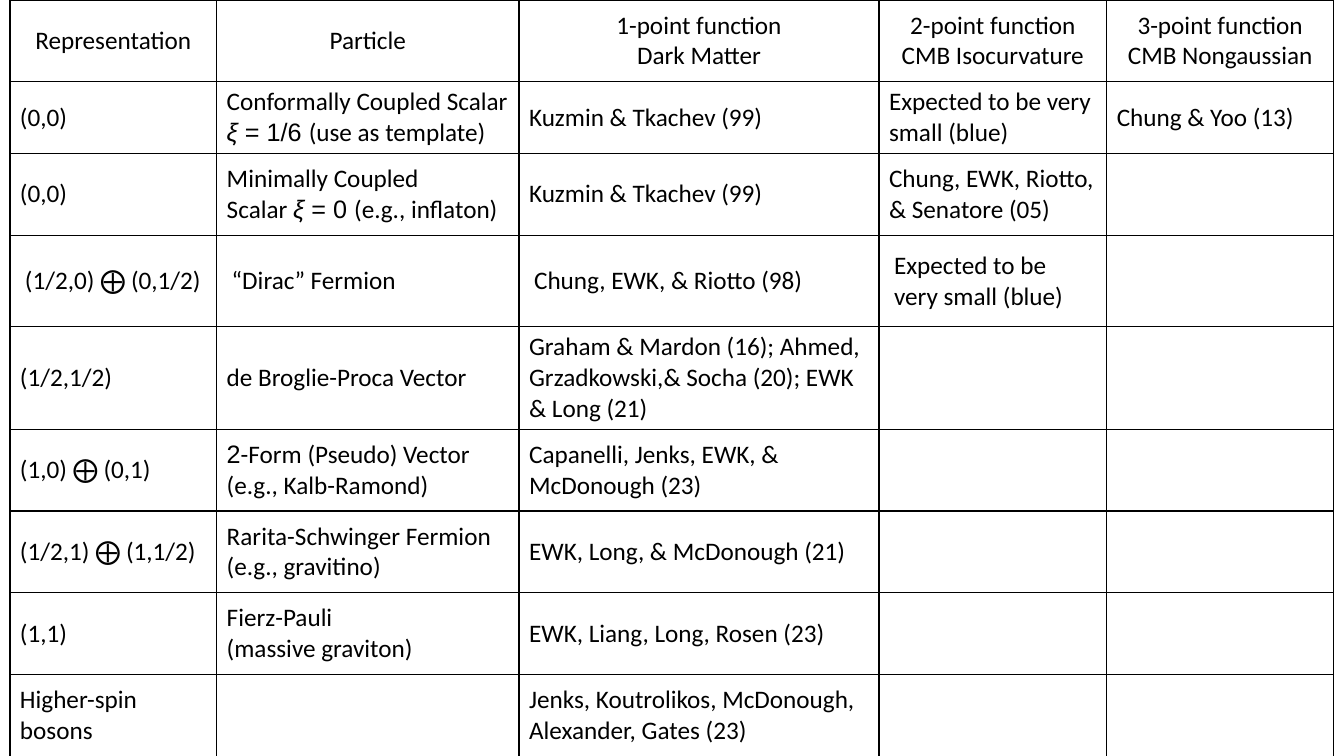
from dataclasses import dataclass

from lxml import etree
from pptx import Presentation
from pptx.dml.color import RGBColor
from pptx.enum.text import MSO_ANCHOR, PP_ALIGN
from pptx.oxml.ns import qn
from pptx.table import _Cell
from pptx.util import Cm, Pt

MIDDLE = MSO_ANCHOR.MIDDLE
CENTER = PP_ALIGN.CENTER
LEFT = PP_ALIGN.LEFT

COLORS = {"ink": "000000"}
TEXT_SIZE = Pt(18)
BORDER_WIDTH = Pt(1)
BORDER_SIDES = ("a:lnL", "a:lnR", "a:lnT", "a:lnB")
COLUMN_WIDTHS = (5.21, 7.62, 9.07, 5.74, 5.72)
WIDE_MARGIN = 0.38


@dataclass(frozen=True)
class Span:
    text: str
    font: str = "Calibri"
    italic: bool = False


Line = list[Span]


@dataclass(frozen=True)
class Row:
    cells: tuple[str | list[Line], ...]
    height: float = 2.06
    align: PP_ALIGN = LEFT
    margin: float | None = None


def scalar_coupling(value: str, note: str) -> Line:
    return [Span("ξ", "Arial", True), Span(f" = {value} ", "Arial"), Span(note)]


ROWS = (
    Row(
        (
            "Representation",
            "Particle",
            "1-point function\nDark Matter",
            "2-point function\nCMB Isocurvature",
            "3-point function CMB Nongaussian",
        ),
        align=CENTER,
    ),
    Row(
        (
            "(0,0)",
            [[Span("Conformally Coupled Scalar "), *scalar_coupling("1/6", "(use as template)")]],
            "Kuzmin & Tkachev (99)",
            "Expected to be very small (blue)",
            "Chung & Yoo (13)",
        ),
        height=1.78,
    ),
    Row(
        (
            "(0,0)",
            [
                [Span("Minimally Coupled")],
                [Span("Scalar "), *scalar_coupling("0", "(e.g., inflaton)")],
            ],
            "Kuzmin & Tkachev (99)",
            "Chung, EWK, Riotto, & Senatore (05)",
            "",
        ),
    ),
    Row(
        (
            "(1/2,0) ⨁ (0,1/2)",
            "“Dirac” Fermion",
            "Chung, EWK, & Riotto (98)",
            "Expected to be very small (blue)",
            "",
        ),
        height=2.31,
        margin=WIDE_MARGIN,
    ),
    Row(
        (
            "(1/2,1/2)",
            "de Broglie-Proca Vector",
            "Graham & Mardon (16); Ahmed, Grzadkowski,& Socha (20); EWK & Long (21)",
            "",
            "",
        ),
        height=2.57,
    ),
    Row(
        (
            "(1,0) ⨁ (0,1)",
            [
                [Span("2", "Arial"), Span("-Form (Pseudo) Vector")],
                [Span("(e.g., Kalb-Ramond)")],
            ],
            "Capanelli, Jenks, EWK, & McDonough (23)",
            "",
            "",
        ),
    ),
    Row(
        (
            "(1/2,1) ⨁ (1,1/2)",
            "Rarita-Schwinger Fermion\n(e.g., gravitino)",
            "EWK, Long, & McDonough (21)",
            "",
            "",
        ),
    ),
    Row(
        (
            "(1,1)",
            "Fierz-Pauli\n(massive graviton)",
            "EWK, Liang, Long, Rosen (23)",
            "",
            "",
        ),
    ),
    Row(
        (
            "Higher-spin bosons",
            "",
            "Jenks, Koutrolikos, McDonough, Alexander, Gates (23)",
            "",
            "",
        ),
    ),
)


def draw_borders(cell: _Cell) -> None:
    properties = cell._tc.get_or_add_tcPr()
    for position, side in enumerate(BORDER_SIDES):
        border = etree.Element(qn(side), w=str(BORDER_WIDTH))
        fill = etree.SubElement(border, qn("a:solidFill"))
        etree.SubElement(fill, qn("a:srgbClr"), val=COLORS["ink"])
        properties.insert(position, border)


def write_cell(cell: _Cell, content: str | list[Line], row: Row) -> None:
    cell.fill.background()
    cell.vertical_anchor = MIDDLE
    if row.margin is not None:
        for side in ("left", "right", "top", "bottom"):
            setattr(cell, f"margin_{side}", Cm(row.margin))
    draw_borders(cell)
    if not content:
        return
    lines = [[Span(text)] for text in content.split("\n")] if isinstance(content, str) else content
    frame = cell.text_frame
    for number, line in enumerate(lines):
        para = frame.add_paragraph() if number else frame.paragraphs[0]
        para.alignment = row.align
        for span in line:
            run = para.add_run()
            run.text = span.text
            formats = {"name": span.font, "size": TEXT_SIZE, "italic": span.italic, "bold": False}
            for name, value in formats.items():
                setattr(run.font, name, value)
            run.font.color.rgb = RGBColor.from_string(COLORS["ink"])


def main() -> None:
    deck = Presentation()
    deck.slide_width, deck.slide_height = Cm(33.87), Cm(19.05)
    page = deck.slides.add_slide(deck.slide_layouts[6])
    table = page.shapes.add_table(
        len(ROWS),
        len(COLUMN_WIDTHS),
        Cm(0.25),
        Cm(0),
        Cm(sum(COLUMN_WIDTHS)),
        Cm(sum(row.height for row in ROWS)),
    ).table
    table.first_row = False
    table.horz_banding = False
    for column, width in zip(table.columns, COLUMN_WIDTHS):
        column.width = Cm(width)
    for table_row, row in zip(table.rows, ROWS):
        table_row.height = Cm(row.height)
        for cell, content in zip(table_row.cells, row.cells):
            write_cell(cell, content, row)
    deck.save("out.pptx")


if __name__ == "__main__":
    main()
